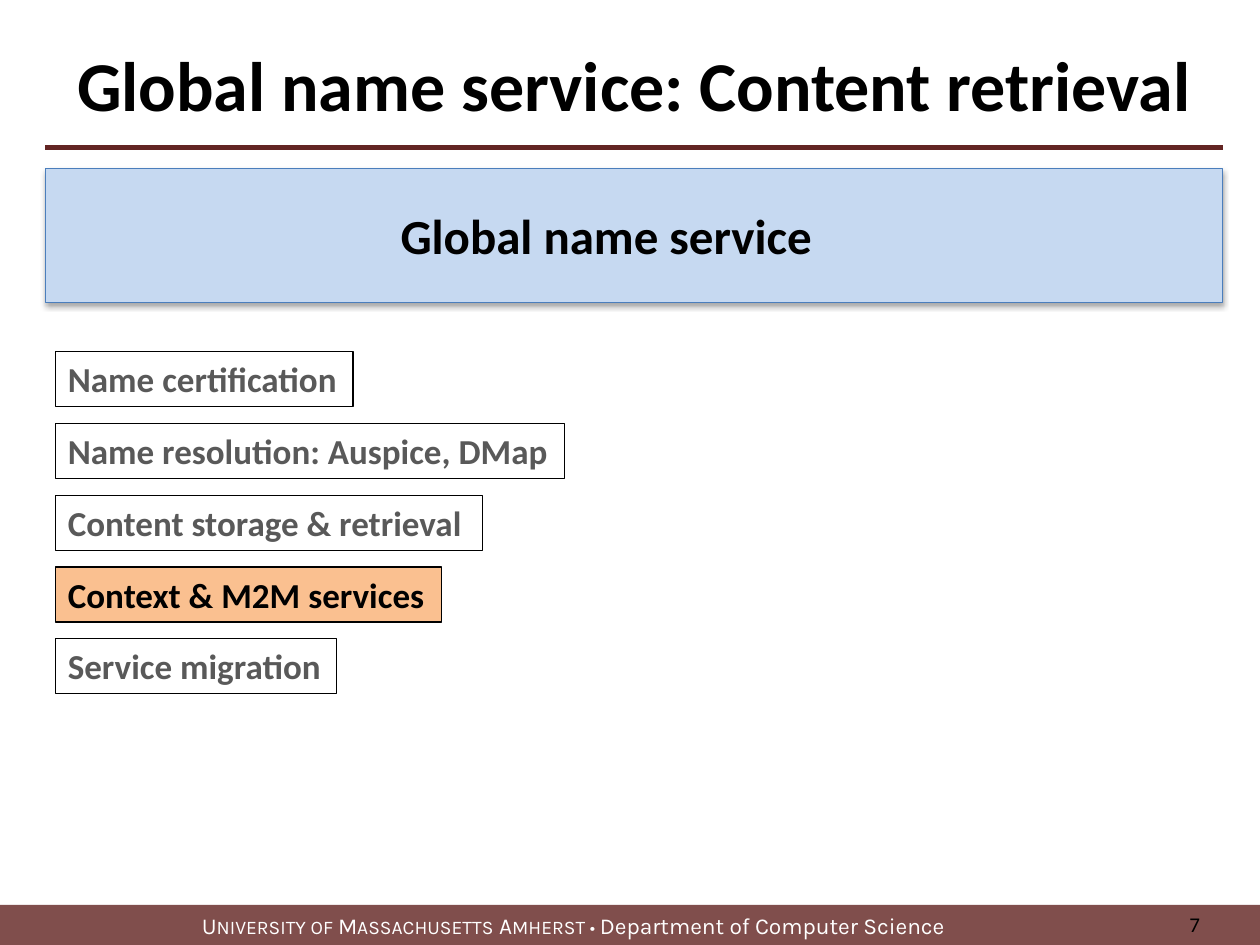
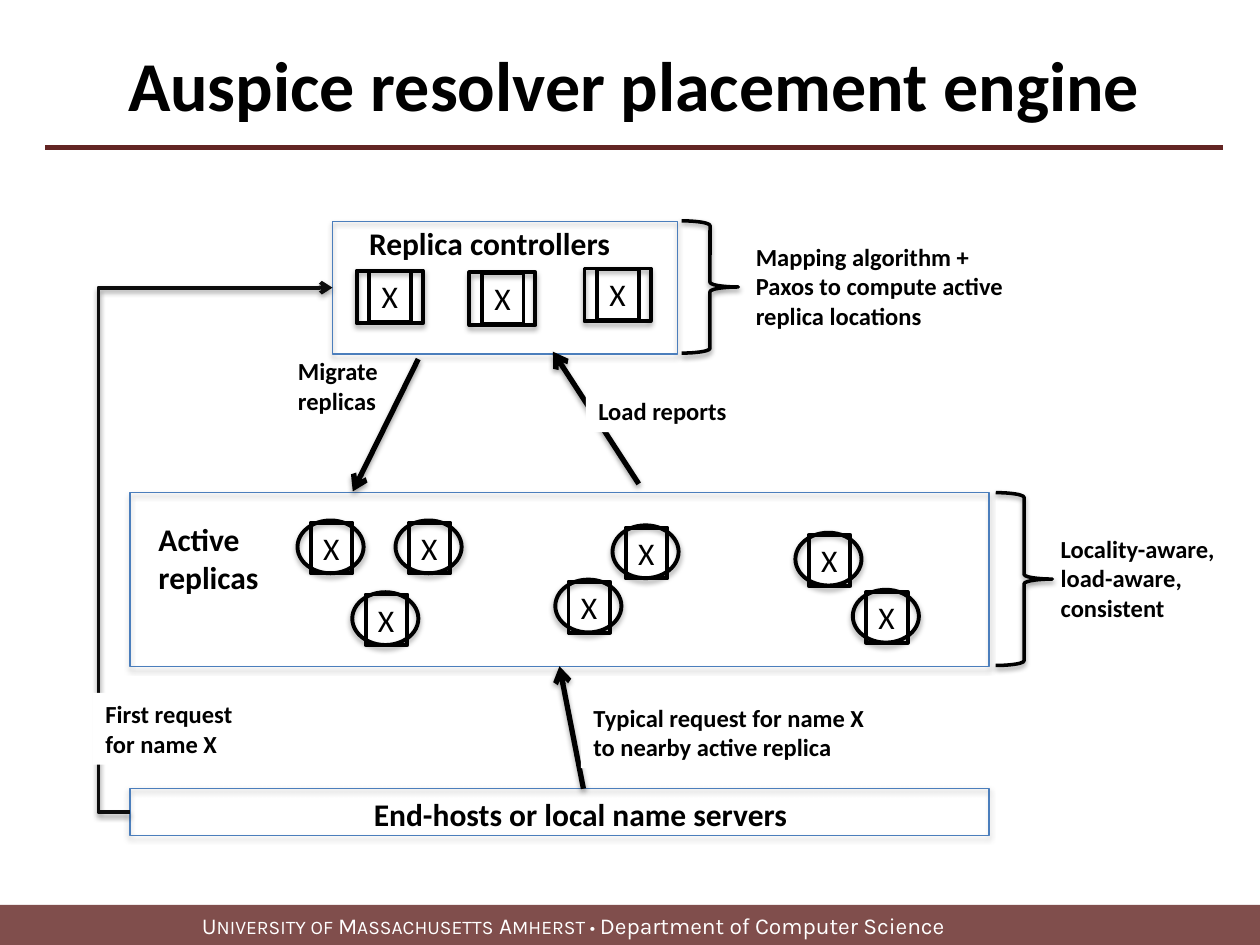
from lxml import etree
from pptx import Presentation
from pptx.dml.color import RGBColor
from pptx.enum.shapes import MSO_CONNECTOR, MSO_SHAPE
from pptx.enum.text import MSO_ANCHOR, PP_ALIGN
from pptx.oxml.ns import qn
from pptx.util import Pt

RECT, OVAL, BRACE = MSO_SHAPE.RECTANGLE, MSO_SHAPE.OVAL, MSO_SHAPE.RIGHT_BRACE
STRAIGHT, ELBOW = MSO_CONNECTOR.STRAIGHT, MSO_CONNECTOR.ELBOW
TOP, MIDDLE = MSO_ANCHOR.TOP, MSO_ANCHOR.MIDDLE
LEFT, CENTER, RIGHT = PP_ALIGN.LEFT, PP_ALIGN.CENTER, PP_ALIGN.RIGHT

BLACK, WHITE, GRAY, INK = "000000", "FFFFFF", "595959", "0D0D0D"
MAROON, BLUE, SKY, PEACH = "632523", "4B7EBC", "C6D9F1", "FAC090"
SOFT, DEEP = (35, 1.8), (38, 1.6)


def color(code):
    return RGBColor.from_string(code)


def apply(target, values):
    for name, value in values.items():
        setattr(target, name, value)


def add(parent, tag, **values):
    return etree.SubElement(parent, qn(tag), {k: str(v) for k, v in values.items()})


class Deck:
    font = "Calibri"
    body = {"size": 18, "bold": True, "tint": BLACK}
    note = {"size": 14, "bold": True, "tint": BLACK}
    mark = {"size": 18, "bold": False, "tint": BLACK}
    head = {"size": 40, "bold": True, "tint": BLACK}

    def __init__(self):
        self.prs = Presentation()
        apply(self.prs, {"slide_width": Pt(720), "slide_height": Pt(540)})
        self.slide = None

    def page(self, title):
        self.slide = self.prs.slides.add_slide(self.prs.slide_layouts[6])
        self.line((26, 84.4), (699, 84.4), MAROON, 3, head=False)
        self.band()
        self.text((26, 15, 672.5, 65.5), title, self.head, align=CENTER, anchor=MIDDLE)

    def band(self):
        bar = self.shape((0, 517, 720, 23.5), fill=MAROON)
        shade = bar.element.spPr.find(".//" + qn("a:srgbClr"))
        add(shade, "a:alpha", val=81000)
        frame = bar.text_frame
        apply(frame, {"margin_left": Pt(115.4), "word_wrap": True, "vertical_anchor": MIDDLE})
        para = frame.paragraphs[0]
        para.alignment = LEFT
        parts = [("U", 13), ("NIVERSITY OF ", 11), ("M", 13), ("ASSACHUSETTS", 11),
                 (" A", 13), ("MHERST • ", 11), ("Department of Computer Science", 13)]
        for words, size in parts:
            run = para.add_run()
            run.text = words
            self.style(run.font, {"size": size, "bold": False, "tint": WHITE}, "Karla")

    def style(self, font, look, name=None):
        apply(font, {"name": name or self.font, "size": Pt(look["size"]), "bold": look["bold"]})
        font.color.rgb = color(look["tint"])

    def letter(self, shape, words, look, wrap=True, align=LEFT, anchor=TOP):
        frame = shape.text_frame
        apply(frame, {"word_wrap": wrap, "vertical_anchor": anchor, "text": words})
        for para in frame.paragraphs:
            para.alignment = align
            self.style(para.runs[0].font, look)

    def text(self, spot, words, look, **flow):
        box = self.slide.shapes.add_textbox(*map(Pt, spot))
        self.letter(box, words, look, **flow)

    def effect(self, shape, shadow):
        effects = add(shape.element.spPr, "a:effectLst")
        if shadow:
            alpha, drop = shadow
            outer = add(effects, "a:outerShdw", blurRad=Pt(3.1), dist=Pt(drop),
                        dir=5400000, rotWithShape=0)
            shade = add(outer, "a:srgbClr", val=BLACK)
            add(shade, "a:alpha", val=alpha * 1000)

    def shape(self, spot, kind=RECT, fill=None, edge=None, width=0.75, shadow=None):
        shape = self.slide.shapes.add_shape(kind, *map(Pt, spot))
        if fill:
            shape.fill.solid()
            shape.fill.fore_color.rgb = color(fill)
        else:
            shape.fill.background()
        if edge:
            shape.line.color.rgb = color(edge)
            shape.line.width = Pt(width)
        else:
            shape.line.fill.background()
        self.effect(shape, shadow)
        return shape

    def panel(self, spot, fill=None):
        return self.shape(spot, fill=fill, edge=BLUE, shadow=SOFT)

    def brace(self, spot):
        self.shape(spot, BRACE, edge=BLACK, width=2, shadow=DEEP)

    def label(self, spot, words):
        self.letter(self.shape(spot, fill=WHITE), words, self.note)

    def node(self, left, top, kind, shift):
        self.shape((left, top, 37.8, 30.2), kind, edge=BLACK, width=2.25, shadow=SOFT)
        dx, dy = shift
        cell = self.shape((left + dx, top + dy, 23.8, 29), edge=BLACK, width=2.25)
        self.letter(cell, "X", self.mark, wrap=False)

    def line(self, start, end, tint=BLACK, width=3, head=True, bend=None, goal=None):
        kind = STRAIGHT if bend is None else ELBOW
        line = self.slide.shapes.add_connector(kind, *map(Pt, start + end))
        if goal:
            line.end_connect(*goal)
        line.line.color.rgb = color(tint)
        line.line.width = Pt(width)
        props = line.element.spPr
        if head:
            add(props.find(qn("a:ln")), "a:tailEnd", type="arrow")
        if bend is not None:
            guides = props.find(qn("a:prstGeom")).find(qn("a:avLst"))
            add(guides, "a:gd", name="adj1", fmla=f"val {round(bend * 100000)}")
        self.effect(line, DEEP if head else None)


def service(deck):
    deck.page("Global name service: Content retrieval")
    topics = [("Name certification", 170), ("Name resolution: Auspice, DMap", 291),
              ("Content storage & retrieval", 244), ("Context & M2M services", 220.5),
              ("Service migration", 160.6)]
    for row, (words, width) in enumerate(topics):
        hot = words.startswith("Context")
        box = deck.shape((31.7, 201 + 41 * row, width, 31.5),
                         fill=PEACH if hot else None, edge=BLACK)
        look = {"size": 20, "bold": True, "tint": BLACK if hot else GRAY}
        deck.letter(box, words, look, wrap=False)
    deck.panel((26, 96.5, 672.5, 76.3), SKY)
    deck.text((221.8, 114, 252, 41), "Global name service",
              {"size": 28, "bold": True, "tint": BLACK}, wrap=False)
    deck.text((525, 513.4, 167.8, 28.8), "7", {"size": 12, "bold": False, "tint": BLACK},
              align=RIGHT, anchor=MIDDLE)


def engine(deck):
    deck.page("Auspice resolver placement engine")
    deck.panel((190, 126.7, 197.3, 75.6))
    active = deck.panel((74.2, 281.5, 491, 99.2))
    deck.panel((74.2, 450.7, 491, 26.6))

    deck.line((365, 276.5), (316, 201))
    deck.line((333.4, 450.7), (319.7, 380.7), goal=(active, 2))
    deck.line((239, 205.2), (201.6, 280.8))
    deck.line((74.2, 464), (190, 164.4), INK, 2.25, bend=-0.155)

    deck.text((203.8, 124.6, 177, 29), "Replica controllers", deck.body)
    deck.text((83.5, 293.8, 75, 51), "Active\nreplicas", deck.body)
    deck.text((206.6, 450.7, 254.2, 29), "End-hosts or local name servers",
              deck.body, wrap=False)

    for left, top in [(203.8, 154.6), (268.2, 155.6), (334, 153.4)]:
        deck.node(left, top, RECT, (7.2, 0.3))
    for left, top in [(170, 297.4), (226, 297.4), (201.3, 338.4), (350, 300.2),
                      (317.3, 331.2), (454.5, 304.4), (487.3, 337)]:
        deck.node(left, top, OVAL, (7.6, 1.3))

    deck.label((53.2, 396, 90.7, 41), "First request for name X")
    deck.label((332, 398, 169.2, 41), "Typical request for name X to nearby active replica")
    deck.label((334.8, 222.5, 105.8, 24.5), "Load reports")
    deck.brace((569, 281.5, 32.4, 98.8))
    deck.brace((389.5, 126.2, 32.4, 75.6))
    deck.text((599, 301.5, 104.4, 58), "Locality-aware,\nload-aware,\nconsistent",
              deck.note, wrap=False)
    deck.text((163.2, 200, 61.2, 41), "Migrate\nreplicas", deck.note, wrap=False)
    deck.text((424.8, 134.8, 157, 58),
              "Mapping algorithm + Paxos to compute active replica locations", deck.note)


def main():
    deck = Deck()
    service(deck)
    engine(deck)
    deck.prs.save("out.pptx")


if __name__ == "__main__":
    main()
